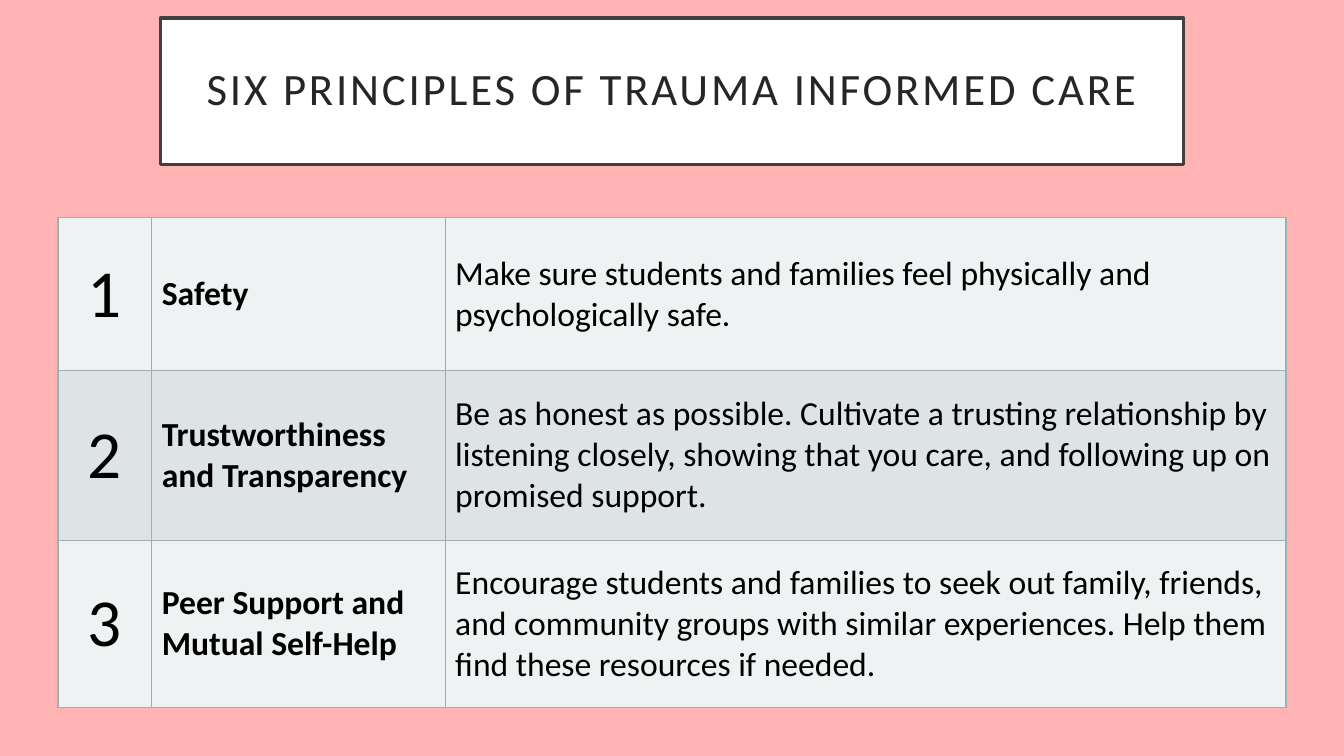
from lxml import etree
from pptx import Presentation
from pptx.dml.color import RGBColor
from pptx.enum.text import MSO_ANCHOR, PP_ALIGN
from pptx.oxml.ns import qn
from pptx.util import Inches, Pt

MIDDLE = MSO_ANCHOR.MIDDLE
CENTER, LEFT = PP_ALIGN.CENTER, PP_ALIGN.LEFT

# Content
TITLE = "SIX PRINCIPLES OF TRAUMA INFORMED CARE"
PRINCIPLES = [
    ("1", "Safety",
     "Make sure students and families feel physically and psychologically safe."),
    ("2", "Trustworthiness and Transparency",
     "Be as honest as possible. Cultivate a trusting relationship by listening "
     "closely, showing that you care, and following up on promised support."),
    ("3", "Peer Support and Mutual Self-Help",
     "Encourage students and families to seek out family, friends, and community "
     "groups with similar experiences. Help them find these resources if needed."),
]

# Theme and geometry (inches)
THEME = {
    "font": "Calibri", "background": "FFB3B3", "panel": "FFFFFF",
    "frame": "404040", "title": "262626", "text": "000000",
    "bands": ("EFF2F3", "DEE3E5"), "border": "9BAFB5",
    "title_size": 32, "number_size": 48, "text_size": 24,
}
SLIDE_W, SLIDE_H = 13.33, 7.5
TITLE_W, TITLE_H, TITLE_TOP = 10.15, 1.45, 0.18
COLS, ROWS = (0.93, 2.91, 8.34), (1.52, 1.68, 1.66)
TABLE_TOP = 2.16
COLUMN_STYLES = [
    (CENTER, {"size": Pt(THEME["number_size"]), "bold": False}),
    (LEFT, {"size": Pt(THEME["text_size"]), "bold": True}),
    (LEFT, {"size": Pt(THEME["text_size"]), "bold": False}),
]


def paint(fill, color):
    fill.solid()
    fill.fore_color.rgb = RGBColor.from_string(color)


def write(tf, text, align, color, style):
    p = tf.paragraphs[0]
    p.alignment = align
    r = p.add_run()
    r.text = text
    for name, value in {"name": THEME["font"], **style}.items():
        setattr(r.font, name, value)
    r.font.color.rgb = RGBColor.from_string(color)
    return p, r


def add_borders(cell, color, width):
    tcPr = cell._tc.get_or_add_tcPr()
    for i, side in enumerate(("lnL", "lnR", "lnT", "lnB")):
        ln = etree.Element(qn(f"a:{side}"), w=str(width))
        fill = etree.SubElement(ln, qn("a:solidFill"))
        etree.SubElement(fill, qn("a:srgbClr"), val=color)
        tcPr.insert(i, ln)


def add_title(s):
    sp = s.shapes.title
    box = {"left": (SLIDE_W - TITLE_W) / 2, "top": TITLE_TOP,
           "width": TITLE_W, "height": TITLE_H}
    for name, value in box.items():
        setattr(sp, name, Inches(value))
    paint(sp.fill, THEME["panel"])
    paint(sp.line.fill, THEME["frame"])
    sp.line.width = Pt(2.5)
    tf = sp.text_frame
    tf.word_wrap = True
    tf.vertical_anchor = MIDDLE
    for side in ("left", "right", "top", "bottom"):
        setattr(tf, f"margin_{side}", Inches(0.2))
    p, r = write(tf, TITLE, CENTER, THEME["title"], {"size": Pt(THEME["title_size"])})
    p.line_spacing = 0.9
    r._r.get_or_add_rPr().set("spc", "200")  # letter spacing, 1/100 pt


def add_principles(s):
    width = sum(COLS)
    table = s.shapes.add_table(
        len(ROWS), len(COLS), Inches((SLIDE_W - width) / 2), Inches(TABLE_TOP),
        Inches(width), Inches(sum(ROWS))).table
    table.first_row = False
    for column, w in zip(table.columns, COLS):
        column.width = Inches(w)
    for i, (row, h, principle) in enumerate(zip(table.rows, ROWS, PRINCIPLES)):
        row.height = Inches(h)
        for cell, text, (align, style) in zip(row.cells, principle, COLUMN_STYLES):
            cell.vertical_anchor = MIDDLE
            paint(cell.fill, THEME["bands"][i % 2])
            add_borders(cell, THEME["border"], Pt(1))
            write(cell.text_frame, text, align, THEME["text"], style)


def main():
    prs = Presentation()
    prs.slide_width, prs.slide_height = Inches(SLIDE_W), Inches(SLIDE_H)
    s = prs.slides.add_slide(prs.slide_layouts[5])  # title only
    paint(s.background.fill, THEME["background"])
    add_title(s)
    add_principles(s)
    prs.save("out.pptx")


if __name__ == "__main__":
    main()
